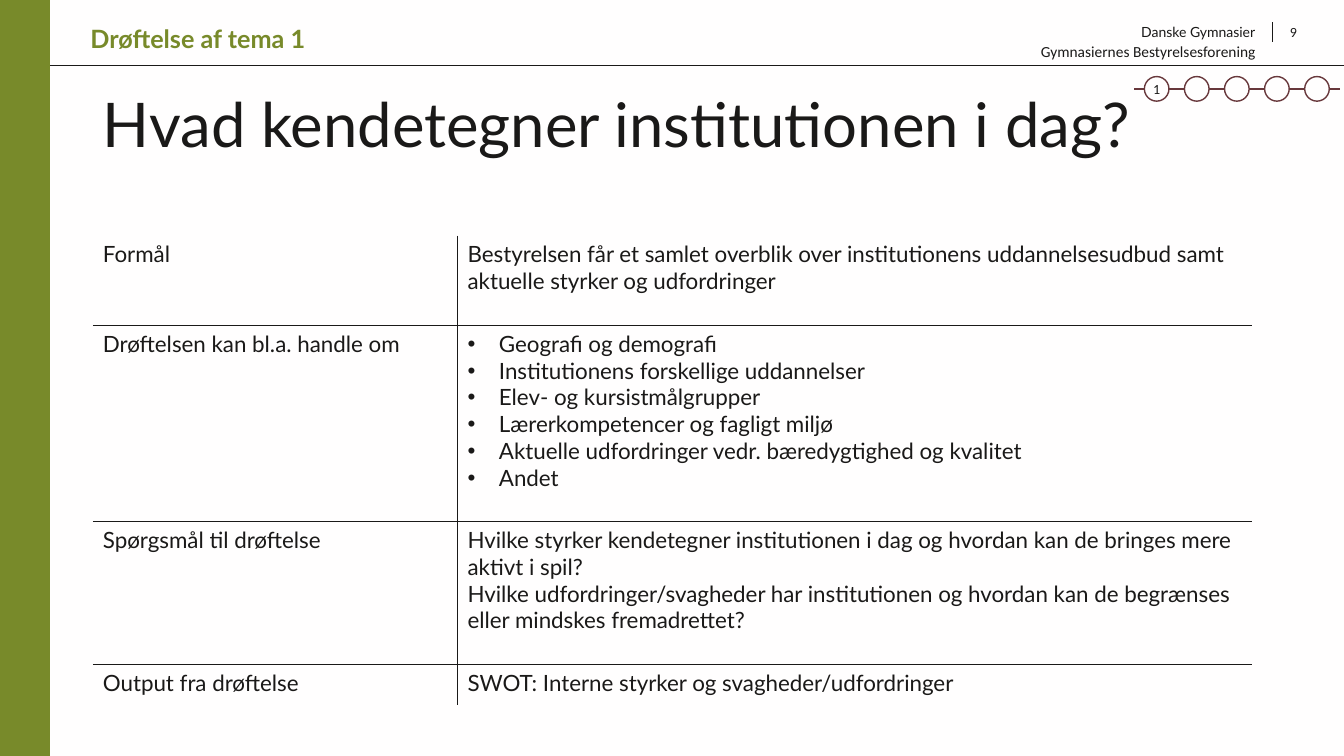
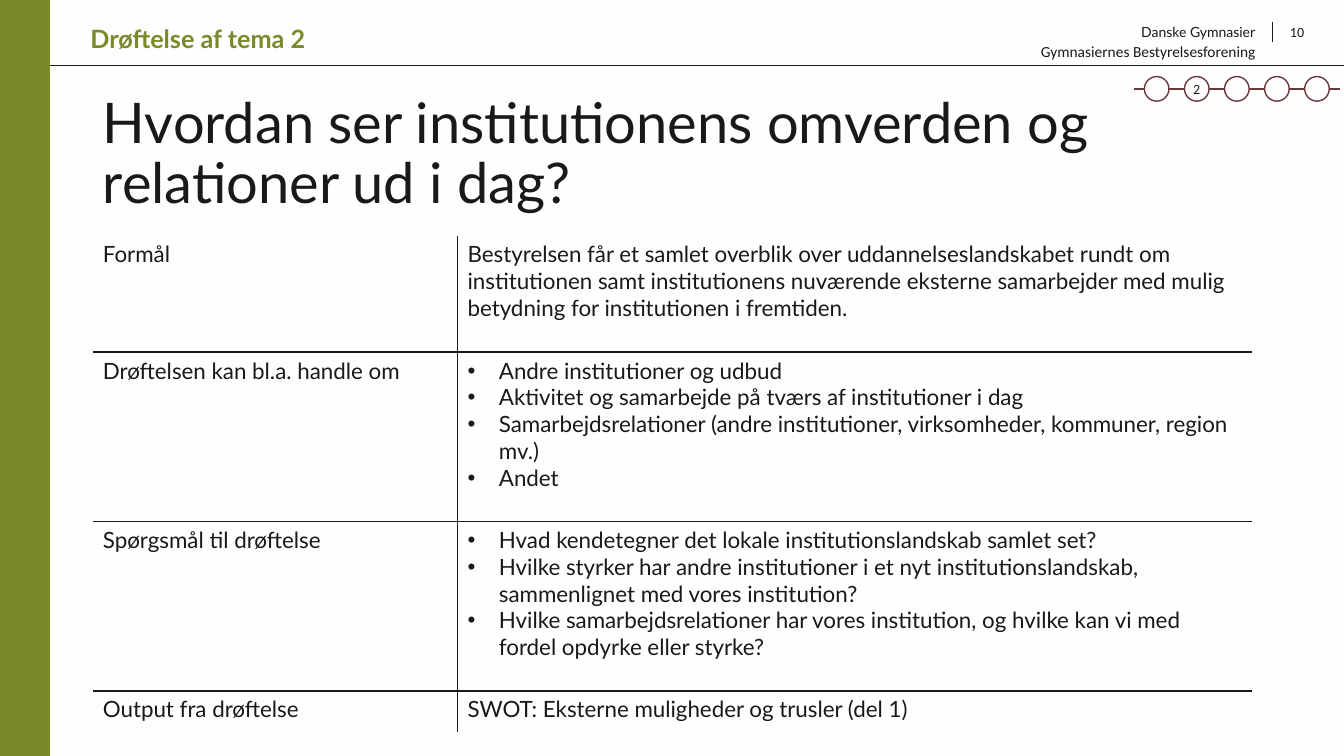
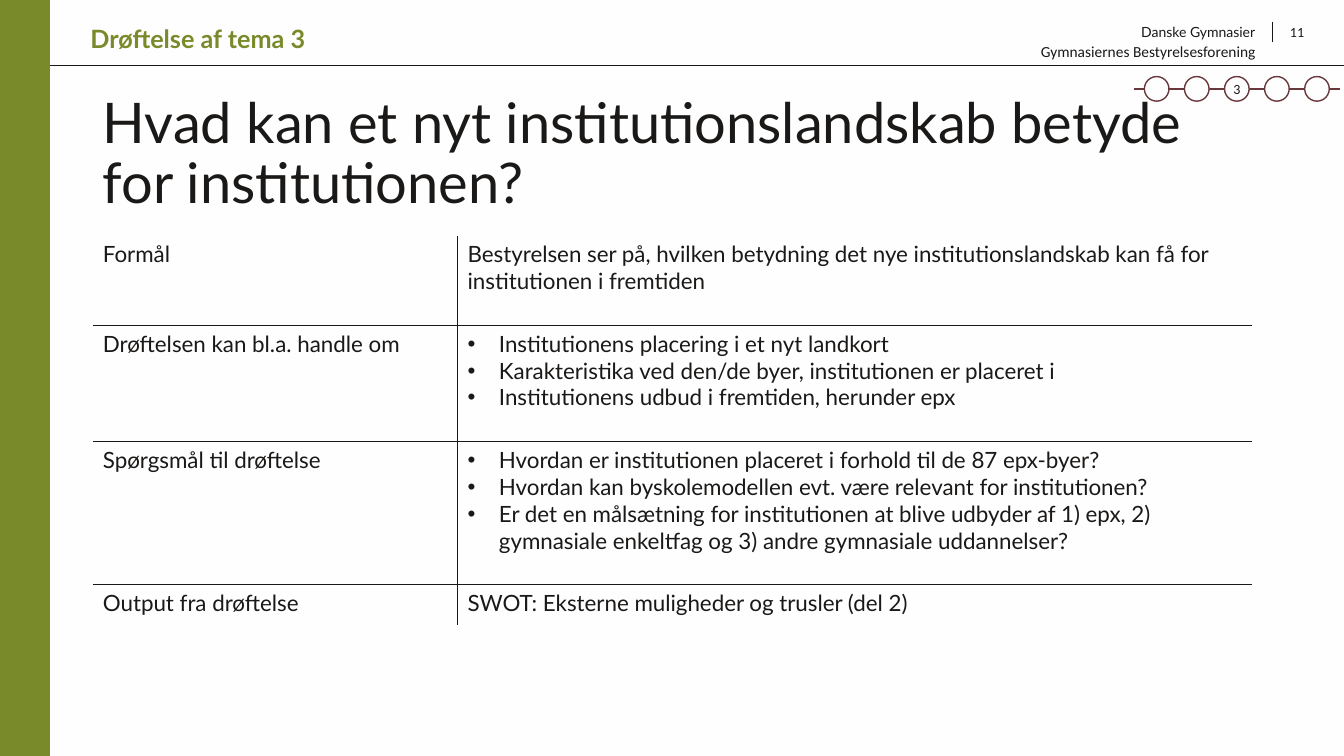
from dataclasses import dataclass

from lxml.etree import SubElement
from pptx import Presentation
from pptx.dml.color import RGBColor
from pptx.enum.shapes import MSO_CONNECTOR, MSO_SHAPE
from pptx.enum.text import MSO_ANCHOR, MSO_AUTO_SIZE, PP_ALIGN
from pptx.oxml.ns import qn
from pptx.util import Cm, Pt

SLIDE_W, SLIDE_H = 33.87, 19.05
TITLE_ONLY = 5


@dataclass(frozen=True)
class Theme:
    ink: str = "1A1918"
    paper: str = "FFFEFE"
    green: str = "788A2A"
    wine: str = "68383C"
    text_font: str = "Lato"
    small_font: str = "Calibri"
    body_size: int = 16
    theme_size: int = 18
    small_size: int = 10
    association_size: int = 11


@dataclass(frozen=True)
class Row:
    label: str
    lines: int  # lines the wrapped content takes up
    content: list
    bullets: bool = False


class Deck:
    step_count = 5
    line_height = 0.67
    cell_padding = 0.25
    last_row_height = 1.03

    def __init__(self, theme):
        self.theme = theme
        self.prs = Presentation()
        self.prs.slide_width, self.prs.slide_height = Cm(SLIDE_W), Cm(SLIDE_H)
        self.slide = None
        backdrop = self.prs.slide_master.background.fill
        backdrop.solid()
        backdrop.fore_color.rgb = RGBColor.from_string(theme.paper)

    def style(self, paragraph, size, font=None, color=None, bold=False, align=PP_ALIGN.LEFT):
        paragraph.alignment = align
        paragraph.font.name = font or self.theme.text_font
        paragraph.font.size = Pt(size)
        paragraph.font.bold = bold
        paragraph.font.color.rgb = RGBColor.from_string(color or self.theme.ink)

    def title(self, text, size):
        heading = self.slide.shapes.title
        heading.left, heading.top = Cm(2.34), Cm(2.26)
        heading.width, heading.height = Cm(29.21), Cm(3.68)
        frame = heading.text_frame
        frame.text = text
        frame.auto_size = MSO_AUTO_SIZE.NONE
        frame.vertical_anchor = MSO_ANCHOR.TOP
        frame.paragraphs[0].line_spacing = 0.9
        self.style(frame.paragraphs[0], size)

    def text(self, text, left, top, width, height, size, **look):
        frame = self.slide.shapes.add_textbox(Cm(left), Cm(top), Cm(width), Cm(height)).text_frame
        frame.word_wrap = True
        frame.text = text
        self.style(frame.paragraphs[0], size, **look)

    def line(self, x1, y1, x2, y2, color, width):
        rule = self.slide.shapes.add_connector(
            MSO_CONNECTOR.STRAIGHT, Cm(x1), Cm(y1), Cm(x2), Cm(y2))
        rule.line.color.rgb = RGBColor.from_string(color)
        rule.line.width = Pt(width)
        SubElement(rule.element.spPr, qn("a:effectLst"))

    def shape(self, kind, left, top, width, height, fill, outline):
        figure = self.slide.shapes.add_shape(kind, Cm(left), Cm(top), Cm(width), Cm(height))
        figure.shadow.inherit = False
        figure.fill.solid()
        figure.fill.fore_color.rgb = RGBColor.from_string(fill)
        figure.line.color.rgb = RGBColor.from_string(outline)
        figure.line.width = Pt(1)
        return figure

    def header(self, theme_number, page):
        theme = self.theme
        self.line(0, 1.65, SLIDE_W, 1.65, theme.ink, 0.5)
        self.line(32.06, 0.56, 32.06, 1.07, theme.ink, 0.75)
        self.shape(MSO_SHAPE.RECTANGLE, 0, 0, 1.24, SLIDE_H, theme.green, theme.green)
        self.text(f"Drøftelse af tema {theme_number}", 2.03, 0.46, 8.08, 1.02,
                  theme.theme_size, color=theme.green, bold=True)
        self.text("Danske Gymnasier", 28.07, 0.46, 3.81, 0.69,
                  theme.small_size, align=PP_ALIGN.RIGHT)
        self.text("Gymnasiernes Bestyrelsesforening", 25.98, 0.94, 6.27, 0.74,
                  theme.association_size, font=theme.small_font)
        self.text(str(page), 32.26, 0.46, 1.24, 1.02, theme.small_size, font=theme.small_font)

    def progress(self, current):
        theme = self.theme
        self.line(28.58, 2.24, 33.78, 2.24, theme.wine, 1)
        for step in range(1, self.step_count + 1):
            marker = self.shape(MSO_SHAPE.OVAL, 28.84 + (step - 1) * 1.01, 1.93, 0.62, 0.62,
                                theme.paper, theme.wine)
            if step == current:
                frame = marker.text_frame
                frame.margin_left = frame.margin_right = 0
                frame.margin_top = frame.margin_bottom = 0
                frame.vertical_anchor = MSO_ANCHOR.MIDDLE
                frame.text = str(step)
                self.style(frame.paragraphs[0], theme.small_size, font=theme.small_font,
                           align=PP_ALIGN.CENTER)

    def bullet(self, paragraph):
        properties = paragraph._p.get_or_add_pPr()
        properties.set("marL", str(Cm(0.79)))
        properties.set("indent", str(Cm(-0.79)))
        SubElement(properties, qn("a:buFont"), typeface="Arial")
        SubElement(properties, qn("a:buChar"), char="•")

    def borders(self, cell, visible):
        """Draw the sides of the cell named in visible (L, R, T, B) and hide the others."""
        properties = cell._tc.get_or_add_tcPr()
        for side in "LRTB":
            edge = SubElement(properties, qn(f"a:ln{side}"), w=str(Pt(1)))
            if side in visible:
                SubElement(SubElement(edge, qn("a:solidFill")), qn("a:srgbClr"),
                           val=self.theme.ink)
            else:
                SubElement(edge, qn("a:noFill"))

    def cell(self, cell, paragraphs, visible, bullets=False):
        self.borders(cell, visible)
        cell.fill.background()
        cell.text = "\n".join(paragraphs)
        for paragraph in cell.text_frame.paragraphs:
            if bullets:
                self.bullet(paragraph)
            self.style(paragraph, self.theme.body_size)

    def agenda(self, rows):
        last = len(rows) - 1
        heights = [(row.lines + 1) * self.line_height + self.cell_padding for row in rows[:-1]]
        heights.append(self.last_row_height)
        table = self.slide.shapes.add_table(
            len(rows), 2, Cm(2.34), Cm(5.94), Cm(29.21), Cm(sum(heights))).table
        table.first_row = table.horz_banding = False
        table.columns[0].width, table.columns[1].width = Cm(9.19), Cm(20.02)
        for index, (row, height) in enumerate(zip(rows, heights)):
            table.rows[index].height = Cm(height)
            across = ("T" if index else "") + ("B" if index < last else "")
            self.cell(table.cell(index, 0), [row.label], "R" + across)
            self.cell(table.cell(index, 1), row.content, "L" + across, row.bullets)

    def discussion(self, number, page, title, title_size, rows):
        self.slide = self.prs.slides.add_slide(self.prs.slide_layouts[TITLE_ONLY])
        self.title(title, title_size)
        self.agenda(rows)
        self.header(number, page)
        self.progress(number)


PURPOSE, TOPICS = "Formål", "Drøftelsen kan bl.a. handle om"
QUESTIONS, OUTPUT = "Spørgsmål til drøftelse", "Output fra drøftelse"

DISCUSSIONS = [
    ("Hvad kendetegner institutionen i dag?", 44, [
        Row(PURPOSE, 2, ["Bestyrelsen får et samlet overblik over institutionens "
                         "uddannelsesudbud samt aktuelle styrker og udfordringer"]),
        Row(TOPICS, 6, ["Geografi og demografi",
                        "Institutionens forskellige uddannelser",
                        "Elev- og kursistmålgrupper",
                        "Lærerkompetencer og fagligt miljø",
                        "Aktuelle udfordringer vedr. bæredygtighed og kvalitet",
                        "Andet"], bullets=True),
        Row(QUESTIONS, 4, ["Hvilke styrker kendetegner institutionen i dag og hvordan kan de "
                           "bringes mere aktivt i spil?",
                           "Hvilke udfordringer/svagheder har institutionen og hvordan kan de "
                           "begrænses eller mindskes fremadrettet?"]),
        Row(OUTPUT, 1, ["SWOT: Interne styrker og svagheder/udfordringer"]),
    ]),
    ("Hvordan ser institutionens omverden og relationer ud i dag?", 40, [
        Row(PURPOSE, 3, ["Bestyrelsen får et samlet overblik over uddannelseslandskabet rundt om "
                         "institutionen samt institutionens nuværende eksterne samarbejder med "
                         "mulig betydning for institutionen i fremtiden."]),
        Row(TOPICS, 5, ["Andre institutioner og udbud",
                        "Aktivitet og samarbejde på tværs af institutioner i dag",
                        "Samarbejdsrelationer (andre institutioner, virksomheder, kommuner, "
                        "region mv.)",
                        "Andet"], bullets=True),
        Row(QUESTIONS, 5, ["Hvad kendetegner det lokale institutionslandskab samlet set?",
                           "Hvilke styrker har andre institutioner i et nyt "
                           "institutionslandskab, sammenlignet med vores institution?",
                           "Hvilke samarbejdsrelationer har vores institution, og hvilke kan vi "
                           "med fordel opdyrke eller styrke?"], bullets=True),
        Row(OUTPUT, 1, ["SWOT: Eksterne muligheder og trusler (del 1)"]),
    ]),
    ("Hvad kan et nyt institutionslandskab betyde for institutionen?", 40, [
        Row(PURPOSE, 2, ["Bestyrelsen ser på, hvilken betydning det nye institutionslandskab kan "
                         "få for institutionen i fremtiden"]),
        Row(TOPICS, 3, ["Institutionens placering i et nyt landkort",
                        "Karakteristika ved den/de byer, institutionen er placeret i",
                        "Institutionens udbud i fremtiden, herunder epx"], bullets=True),
        Row(QUESTIONS, 4, ["Hvordan er institutionen placeret i forhold til de 87 epx-byer?",
                           "Hvordan kan byskolemodellen evt. være relevant for institutionen?",
                           "Er det en målsætning for institutionen at blive udbyder af 1) epx, "
                           "2) gymnasiale enkeltfag og 3) andre gymnasiale uddannelser?"],
            bullets=True),
        Row(OUTPUT, 1, ["SWOT: Eksterne muligheder og trusler (del 2)"]),
    ]),
]


def main():
    deck = Deck(Theme())
    first_page = 9
    for number, (title, title_size, rows) in enumerate(DISCUSSIONS, start=1):
        deck.discussion(number, first_page + number - 1, title, title_size, rows)
    deck.prs.save("out.pptx")


if __name__ == "__main__":
    main()
